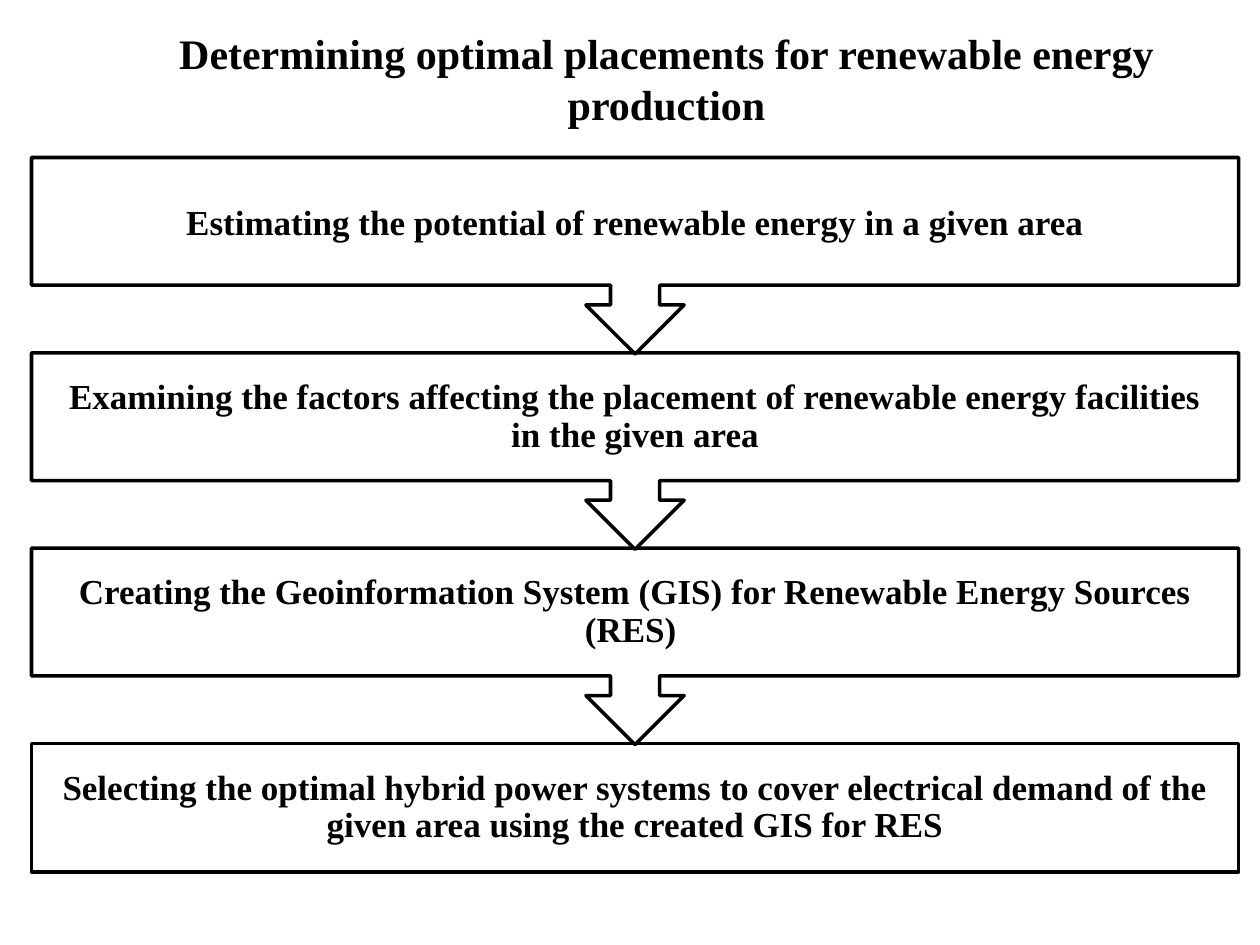
import dataclasses

import pptx
import pptx.dml.color
import pptx.enum.shapes
import pptx.enum.text
import pptx.util
from pptx.util import Inches


@dataclasses.dataclass(frozen=True)
class Theme:
    font: str = "Times New Roman"
    ink: pptx.dml.color.RGBColor = pptx.dml.color.RGBColor(0, 0, 0)
    paper: pptx.dml.color.RGBColor = pptx.dml.color.RGBColor(255, 255, 255)
    title_size: pptx.util.Length = pptx.util.Pt(24)
    step_size: pptx.util.Length = pptx.util.Pt(20)
    outline: pptx.util.Length = pptx.util.Pt(2)


THEME = Theme()

TITLE = "Determining optimal placements for renewable energy production"

# Each step: wording, line spacing, space after in points
STEPS = [
    ("Estimating the potential of renewable energy in a given area", 1.0, 6),
    ("Examining the factors affecting the placement of renewable energy "
     "facilities in the given area", 0.9, 7),
    ("Creating the Geoinformation System (GIS) for Renewable Energy "
     "Sources (RES) ", 0.9, 7),
    ("Selecting the optimal hybrid power systems to cover electrical demand "
     "of the given area using the created GIS for RES", 0.9, 7),
]


def add_text(slide, box, text, size):
    """Add centred bold text in a box; return its frame and paragraph."""
    frame = slide.shapes.add_textbox(*box).text_frame
    frame.word_wrap = True
    paragraph = frame.paragraphs[0]
    paragraph.alignment = pptx.enum.text.PP_ALIGN.CENTER
    run = paragraph.add_run()
    run.text = text
    run.font.name = THEME.font
    run.font.size = size
    run.font.bold = True
    run.font.color.rgb = THEME.ink
    return frame, paragraph


def add_title(slide, box):
    frame, _ = add_text(slide, box, TITLE, THEME.title_size)
    frame.auto_size = pptx.enum.text.MSO_AUTO_SIZE.SHAPE_TO_FIT_TEXT


def add_outline(slide, kind, box):
    shape = slide.shapes.add_shape(kind, *box)
    shape.shadow.inherit = False
    shape.fill.solid()
    shape.fill.fore_color.rgb = THEME.paper
    shape.line.color.rgb = THEME.ink
    shape.line.width = THEME.outline
    return shape


def add_step_text(slide, box, text, line_spacing, space_after):
    frame, paragraph = add_text(slide, box, text, THEME.step_size)
    frame.vertical_anchor = pptx.enum.text.MSO_ANCHOR.MIDDLE
    frame.margin_left = frame.margin_right = Inches(0.16)
    frame.margin_top = frame.margin_bottom = Inches(0.16)
    paragraph.line_spacing = line_spacing
    paragraph.space_after = pptx.util.Pt(space_after)


def add_process(slide, box):
    """Stack the steps, each one pointing down at the next."""
    left, top, width, height = box
    step_height, callout_height = Inches(1.02), Inches(1.56)
    pitch = (height - step_height) // (len(STEPS) - 1)
    kinds = pptx.enum.shapes.MSO_SHAPE

    # Drawn from the bottom up so that each arrow tip lies over the next step
    for index, step in reversed(list(enumerate(STEPS))):
        step_top = top + index * pitch
        if index == len(STEPS) - 1:
            add_outline(slide, kinds.RECTANGLE,
                        (left, step_top, width, step_height))
        else:
            callout = add_outline(slide, kinds.UP_ARROW_CALLOUT,
                                  (left, step_top, width, callout_height))
            callout.rotation = 180
        add_step_text(slide, (left, step_top, width, step_height), *step)


def main():
    presentation = pptx.Presentation()
    presentation.slide_width = Inches(10)
    presentation.slide_height = Inches(7.5)
    slide = presentation.slides.add_slide(presentation.slide_layouts[6])

    add_process(slide, (Inches(0.25), Inches(1.25), Inches(9.58), Inches(5.67)))
    add_title(slide, (Inches(0.83), Inches(0.17), Inches(8.92), Inches(0.91)))

    presentation.save("out.pptx")


if __name__ == "__main__":
    main()
